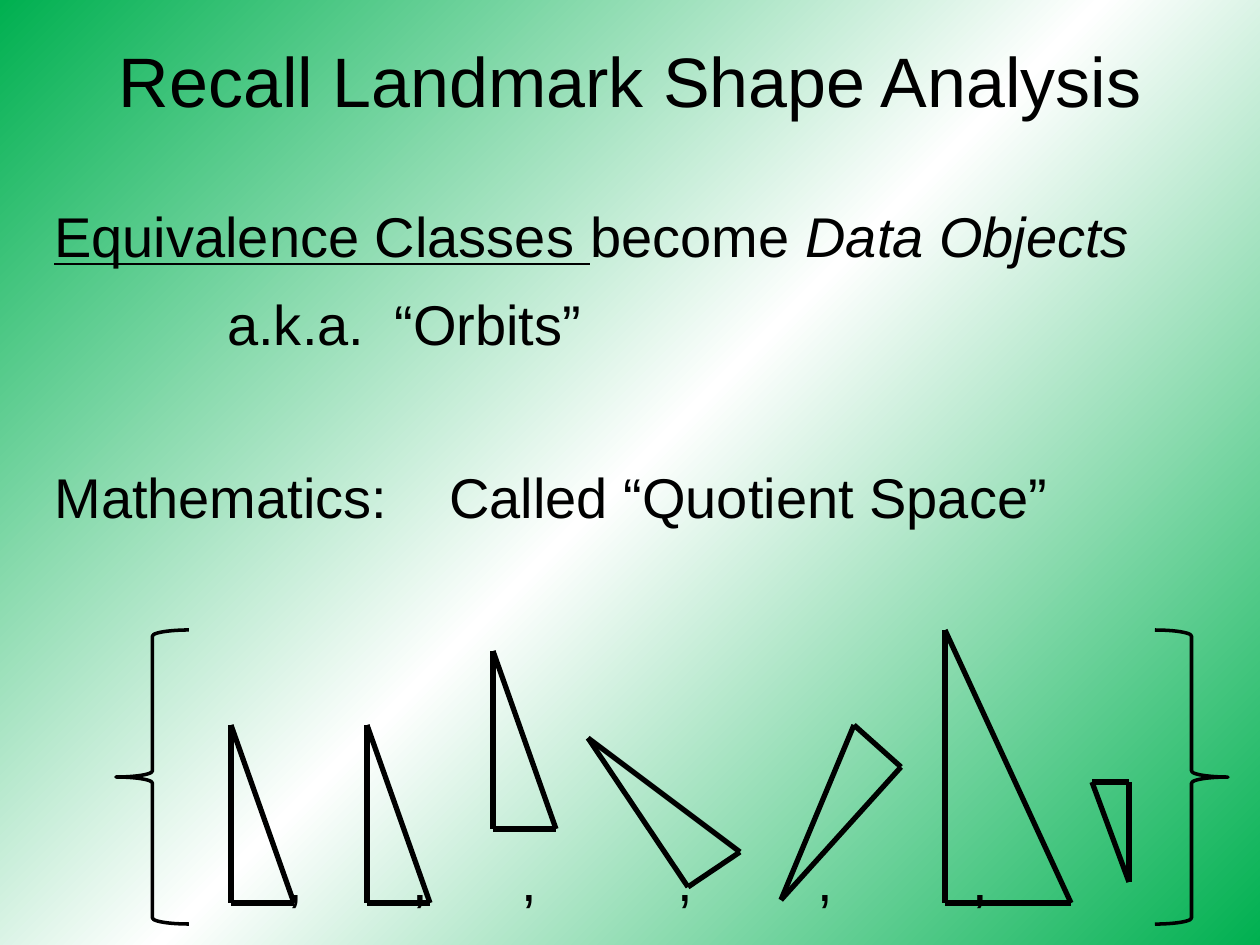
"""Build a slide on landmark shape analysis with a row of equivalent triangles."""
from copy import deepcopy
from dataclasses import dataclass
from typing import NamedTuple

from pptx import Presentation
from pptx.dml.color import RGBColor as Rgb
from pptx.enum.shapes import MSO_CONNECTOR as Conn, MSO_SHAPE as Shape
from pptx.enum.text import MSO_ANCHOR as Anchor, PP_ALIGN as Align
from pptx.oxml.ns import qn
from pptx.oxml.xmlchemy import OxmlElement as Node
from pptx.slide import Slide
from pptx.util import Emu, Pt


@dataclass(frozen=True)
class Theme:
    font: str = "Arial"
    ink: Rgb = Rgb(0, 0, 0)
    green: Rgb = Rgb(0x00, 0xB0, 0x50)
    white: Rgb = Rgb(0xFF, 0xFF, 0xFF)
    title: int = 40
    body: int = 32
    side: int = 3
    brace: int = 2


class Box(NamedTuple):
    left: int
    top: int
    width: int
    height: int


class Bit(NamedTuple):
    text: str
    under: bool = False
    slant: bool = False


class Line(NamedTuple):
    bits: list[Bit]
    gap: int = 0
    stops: tuple[int, ...] = ()
    pitch: float = 1.0


class Spot(NamedTuple):
    x: int
    y: int


class Tri(NamedTuple):
    apex: Spot
    heel: Spot
    toe: Spot


THEME = Theme()
TITLE = Line([Bit("Recall Landmark Shape Analysis")])
COMMAS = (233, 358, 467, 623, 763, 918)
BODY = [
    Line([Bit("Equivalence Classes ", under=True), Bit("become "),
          Bit("Data Objects", slant=True)], 14, (), 1.1),
    Line([Bit("\ta.k.a.\t“Orbits”")], 14, (173, 340), 1.1),
    Line([Bit("Mathematics:\tCalled “Quotient Space”")], 99, (395,), 1.1),
    Line([Bit("\t," * len(COMMAS))], 309, COMMAS, 1.1),
]


def px(size: int) -> Emu:
    """Turn pixels into EMU."""
    return Emu(round(size * 914400 / 126))


def right(x: int, y: int, wide: int, high: int) -> Tri:
    """Give the right triangle whose apex is at x, y."""
    return Tri(Spot(x, y), Spot(x, y + high), Spot(x + wide, y + high))


TRIS = [
    *(right(x, y, 63, 178) for x, y in ((231, 725), (367, 725), (493, 651))),
    Tri(Spot(588, 738), Spot(688, 887), Spot(740, 852)),
    Tri(Spot(781, 900), Spot(901, 767), Spot(854, 725)),
    right(945, 630, 126, 273),
    right(1129, 882, -37, -100),
]


def paint(slide: Slide) -> None:
    """Fill the background with a diagonal green and white blend."""
    fill = slide.background.fill
    fill.gradient()
    fill.gradient_angle = 315
    row = next(slide.element.iter(qn("a:gsLst")))
    row.insert(1, deepcopy(row[0]))
    hues = (THEME.green, THEME.white, THEME.green)
    for rank, (stop, hue) in enumerate(zip(fill.gradient_stops, hues)):
        stop.color.rgb = hue
        stop.position = rank / 2


def write(slide: Slide, box: Box, lines: list[Line], size: int,
          align: Align, anchor: Anchor) -> None:
    """Set lines of text in a box, run by run."""
    frame = slide.shapes.add_textbox(*map(px, box)).text_frame
    frame.word_wrap = True
    frame.vertical_anchor = anchor
    for rank, line in enumerate(lines):
        para = frame.add_paragraph() if rank else frame.paragraphs[0]
        para.alignment = align
        para.line_spacing = line.pitch
        para.space_before = px(line.gap)
        if line.stops:
            tabs = Node("a:tabLst")
            for stop in line.stops:
                tab = Node("a:tab")
                tab.set("pos", str(px(stop)))
                tab.set("algn", "l")
                tabs.append(tab)
            para._p.get_or_add_pPr().append(tabs)
        for bit in line.bits:
            run = para.add_run()
            run.text = bit.text
            font = run.font
            font.name, font.size = THEME.font, Pt(size)
            font.color.rgb = THEME.ink
            font.underline, font.italic = bit.under, bit.slant


def draw(slide: Slide, tri: Tri) -> None:
    """Draw the three sides of a triangle as one group."""
    group = slide.shapes.add_group_shape()
    for start, end in zip(tri, tri[1:] + tri[:1]):
        side = group.shapes.add_connector(
            Conn.STRAIGHT, *map(px, (*start, *end)))
        side.line.color.rgb = THEME.ink
        side.line.width = Pt(THEME.side)
        side._element.spPr.append(Node("a:effectLst"))


def brace(slide: Slide, box: Box, turn: int) -> None:
    """Draw an open brace, turned by some degrees."""
    shape = slide.shapes.add_shape(Shape.LEFT_BRACE, *map(px, box))
    shape.rotation = turn
    shape.shadow.inherit = False
    shape.fill.background()
    shape.line.color.rgb = THEME.ink
    shape.line.width = Pt(THEME.brace)


def main() -> None:
    """Build and save the slide."""
    deck = Presentation()
    deck.slide_width, deck.slide_height = px(1260), px(945)
    slide = deck.slides.add_slide(deck.slide_layouts[6])
    paint(slide)
    write(slide, Box(63, 0, 1134, 158), [TITLE], THEME.title,
          Align.CENTER, Anchor.MIDDLE)
    write(slide, Box(42, 189, 1160, 714), BODY, THEME.body,
          Align.LEFT, Anchor.TOP)
    for tri in TRIS:
        draw(slide, tri)
    for left, turn in ((116, 0), (1155, 180)):
        brace(slide, Box(left, 630, 73, 294), turn)
    deck.save("out.pptx")


if __name__ == "__main__":
    main()
